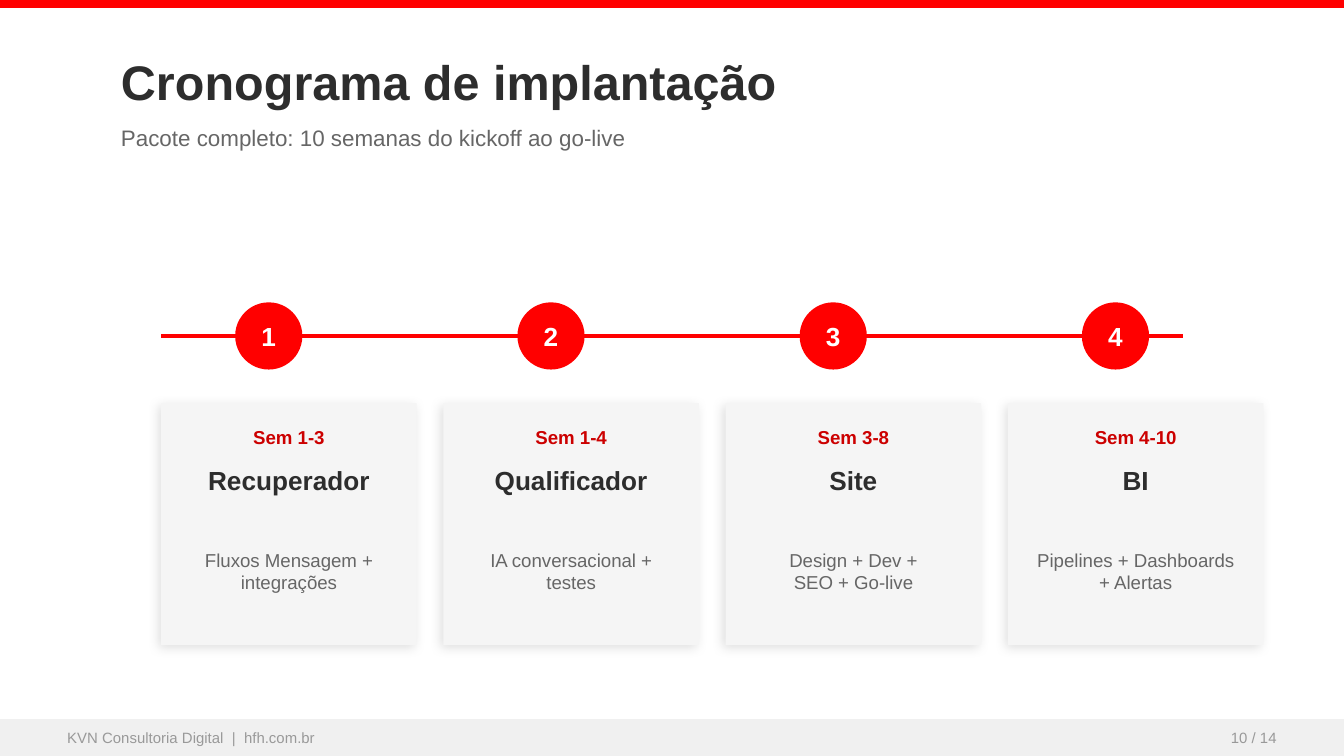
"""Build the implementation timeline slide."""
from lxml.etree import SubElement
from pptx import Presentation
from pptx.dml.color import RGBColor
from pptx.enum.shapes import MSO_CONNECTOR as Connector, MSO_SHAPE as Preset
from pptx.enum.text import MSO_ANCHOR as Anchor, MSO_AUTO_SIZE as AutoSize, PP_ALIGN as Align
from pptx.oxml import parse_xml
from pptx.oxml.ns import nsdecls, qn
from pptx.util import Inches, Pt

RED = RGBColor(0xFF, 0x00, 0x00)
DARK_RED = RGBColor(0xCC, 0x00, 0x00)
WHITE = RGBColor(0xFF, 0xFF, 0xFF)
INK = RGBColor(0x2D, 0x2D, 0x2D)
GRAY = RGBColor(0x66, 0x66, 0x66)
PALE_GRAY = RGBColor(0x99, 0x99, 0x99)
CARD_FILL = RGBColor(0xF5, 0xF5, 0xF5)
FOOTER_FILL = RGBColor(0xF0, 0xF0, 0xF0)

SHADOW = (
    f'<a:outerShdw {nsdecls("a")} blurRad="{Pt(6)}" dist="{Pt(2)}" dir="8100000" '
    'algn="bl" rotWithShape="0"><a:srgbClr val="000000"><a:alpha val="12000"/>'
    "</a:srgbClr></a:outerShdw>"
)

presentation = Presentation()
presentation.slide_width = Inches(10)
presentation.slide_height = Inches(10) * 9 // 16
slide = presentation.slides.add_slide(presentation.slide_layouts[0])
shapes = slide.shapes


def add_block(preset, box, color):
    shape = shapes.add_shape(preset, *map(Inches, box))
    shape.shadow.inherit = False
    shape.fill.solid()
    shape.fill.fore_color.rgb = color
    shape.line.fill.background()
    return shape


def write_text(shape, text, size, color, bold=False, align=Align.CENTER, inset=0):
    frame = shape.text_frame
    frame.text = text
    frame_format = {
        "word_wrap": True,
        "auto_size": AutoSize.NONE,
        "vertical_anchor": Anchor.MIDDLE,
        "margin_left": Inches(inset),
        "margin_right": Inches(inset),
        "margin_top": Inches(inset / 2),
        "margin_bottom": Inches(inset / 2),
    }
    for name, value in frame_format.items():
        setattr(frame, name, value)
    for paragraph in frame.paragraphs:
        paragraph.alignment = align
        paragraph.space_before = Pt(0)
        for name, value in {"name": "Arial", "size": Pt(size), "bold": bold}.items():
            setattr(paragraph.font, name, value)
        paragraph.font.color.rgb = color


add_block(Preset.RECTANGLE, (0, 0, 10, 0.06), RED)

headings = [
    ("Cronograma de implantação", 0.3, 0.6, 26, INK, True),
    ("Pacote completo: 10 semanas do kickoff ao go-live", 0.85, 0.35, 12, GRAY, False),
]
for placeholder, (text, top, height, size, color, bold) in zip(slide.placeholders, headings):
    placeholder.left, placeholder.top = Inches(0.8), Inches(top)
    placeholder.width, placeholder.height = Inches(8.4), Inches(height)
    write_text(placeholder, text, size, color, bold, Align.LEFT, 0.1)

timeline = shapes.add_connector(
    Connector.STRAIGHT, Inches(1.2), Inches(2.5), Inches(8.8), Inches(2.5)
)
timeline.line.color.rgb = RED
timeline.line.width = Pt(2)
SubElement(timeline._element.spPr, qn("a:effectLst"))

phases = [
    ("Sem 1-3", "Recuperador", "Fluxos Mensagem +\nintegrações"),
    ("Sem 1-4", "Qualificador", "IA conversacional +\ntestes"),
    ("Sem 3-8", "Site", "Design + Dev +\nSEO + Go-live"),
    ("Sem 4-10", "BI", "Pipelines + Dashboards\n+ Alertas"),
]
card_rows = [
    (3.1, 0.3, 10, DARK_RED, True),
    (3.4, 0.35, 14, INK, True),
    (3.85, 0.8, 10, GRAY, False),
]
card_width, card_gap = 1.9, 0.2
for index, phase in enumerate(phases):
    left = 1.2 + index * (card_width + card_gap)
    marker = add_block(Preset.OVAL, (left + 0.55, 2.25, 0.5, 0.5), RED)
    write_text(marker, str(index + 1), 14, WHITE, True)
    card = add_block(Preset.RECTANGLE, (left, 3, card_width, 1.8), CARD_FILL)
    card._element.spPr.find(qn("a:effectLst")).append(parse_xml(SHADOW))
    for text, (top, height, size, color, bold) in zip(phase, card_rows):
        label = shapes.add_textbox(*map(Inches, (left, top, card_width, height)))
        write_text(label, text, size, color, bold)

add_block(Preset.RECTANGLE, (0, 5.35, 10, 0.28), FOOTER_FILL)
footer_texts = [
    ("KVN Consultoria Digital  |  hfh.com.br", 0.5, 5, Align.LEFT),
    ("10 / 14", 7.5, 2, Align.RIGHT),
]
for text, left, width, align in footer_texts:
    label = shapes.add_textbox(*map(Inches, (left, 5.35, width, 0.28)))
    write_text(label, text, 8, PALE_GRAY, align=align)

presentation.save("out.pptx")
